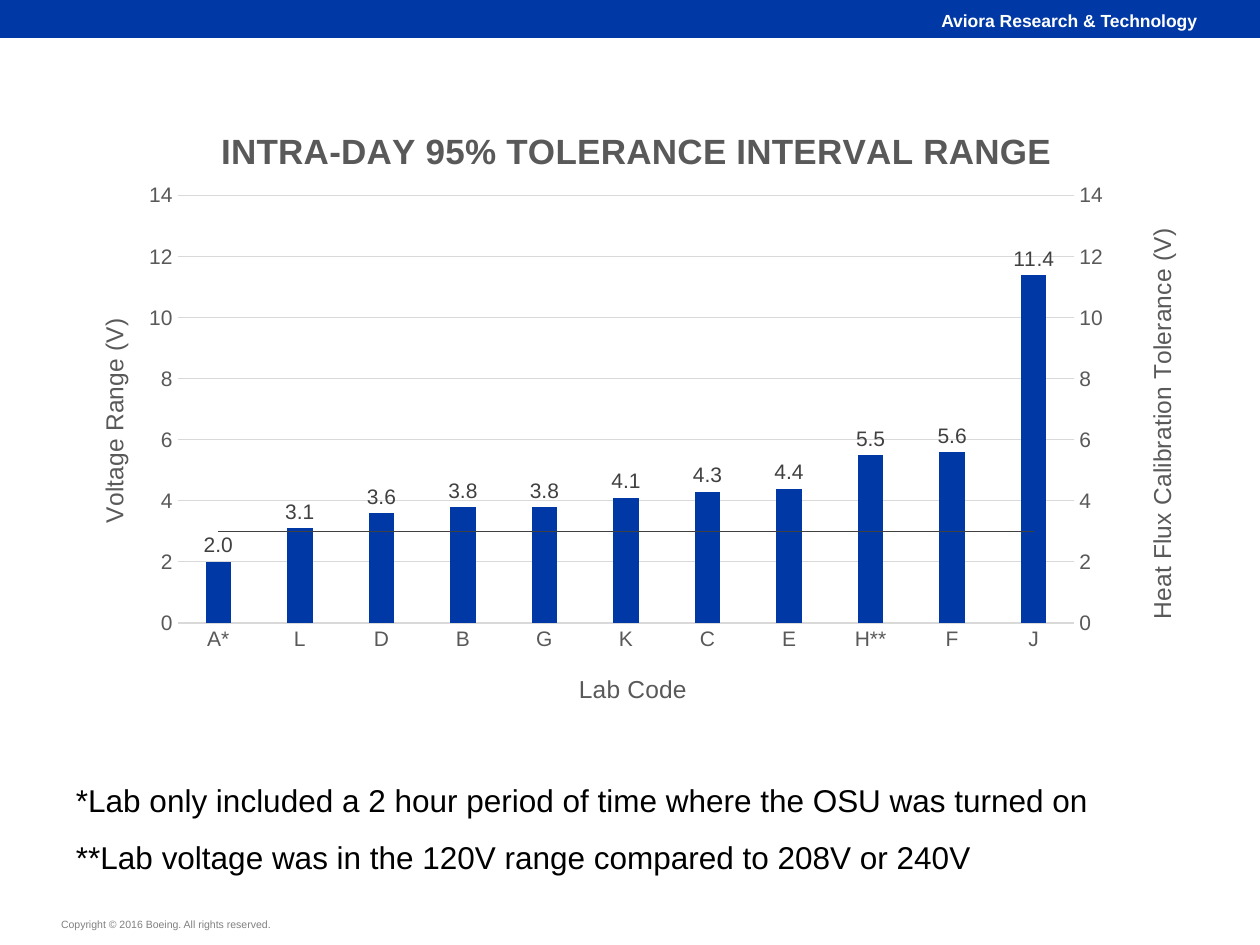
from copy import deepcopy
from dataclasses import dataclass

from lxml import etree
from pptx import Presentation
from pptx.chart.axis import ValueAxis
from pptx.chart.data import CategoryChartData
from pptx.dml.color import RGBColor
from pptx.enum.chart import XL_CHART_TYPE, XL_LABEL_POSITION, XL_MARKER_STYLE, XL_TICK_MARK
from pptx.enum.shapes import MSO_SHAPE
from pptx.enum.text import MSO_ANCHOR, PP_ALIGN
from pptx.oxml.ns import qn
from pptx.util import Emu, Pt

COLUMNS = XL_CHART_TYPE.COLUMN_CLUSTERED
OUTSIDE_END = XL_LABEL_POSITION.OUTSIDE_END
NO_MARKER = XL_MARKER_STYLE.NONE
NO_TICK = XL_TICK_MARK.NONE
RECTANGLE = MSO_SHAPE.RECTANGLE
TOP, BOTTOM = MSO_ANCHOR.TOP, MSO_ANCHOR.BOTTOM
LEFT, RIGHT = PP_ALIGN.LEFT, PP_ALIGN.RIGHT

BLUE = RGBColor(0x00, 0x39, 0xA6)
WHITE = RGBColor(0xFF, 0xFF, 0xFF)
BLACK = RGBColor(0x00, 0x00, 0x00)
GRAY = RGBColor(0x80, 0x80, 0x80)
AXIS_GRAY = RGBColor(0x59, 0x59, 0x59)
LABEL_GRAY = RGBColor(0x40, 0x40, 0x40)
GRID_GRAY = RGBColor(0xD9, 0xD9, 0xD9)

FONT = "Arial"
PIXELS_PER_INCH = 126

RANGES = {"A*": 2.0, "L": 3.1, "D": 3.6, "B": 3.8, "G": 3.8, "K": 4.1,
          "C": 4.3, "E": 4.4, "H**": 5.5, "F": 5.6, "J": 11.4}
TOLERANCE = 3


@dataclass(frozen=True)
class Box:
    left: int
    top: int
    width: int
    height: int


@dataclass(frozen=True)
class TextBlock:
    box: Box
    lines: tuple[str, ...]
    size: int
    color: RGBColor
    bold: bool = False
    alignment: PP_ALIGN = LEFT
    anchor: MSO_ANCHOR = TOP
    margins: tuple[int, int] = (0, 0)
    line_spacing: float = 1.0


CHART_BOX = Box(63, 93, 1134, 631)
PLOT_BOX = Box(177, 196, 897, 427)

TEXT_BLOCKS = (
    TextBlock(Box(60, 917, 285, 15), ("Copyright © 2016 Boeing. All rights reserved.",),
              6, GRAY, anchor=BOTTOM, margins=(1, 1)),
    TextBlock(Box(505, 10, 692, 21), ("Aviora Research & Technology",),
              10, WHITE, bold=True, alignment=RIGHT),
    TextBlock(Box(63, 756, 1134, 120),
              ("*Lab only included a 2 hour period of time where the OSU was turned on",
               "**Lab voltage was in the 120V range compared to 208V or 240V"),
              18, BLACK, margins=(13, 6), line_spacing=1.5),
)


def px(pixels: int) -> Emu:
    return Emu(round(pixels * 914400 / PIXELS_PER_INCH))


def frame(box: Box) -> tuple[Emu, ...]:
    return px(box.left), px(box.top), px(box.width), px(box.height)


def style_font(font, size: int, color: RGBColor, bold: bool = False) -> None:
    font.name = FONT
    font.size = Pt(size)
    font.bold = bold
    font.color.rgb = color


def add_text(slide, block: TextBlock) -> None:
    text_frame = slide.shapes.add_textbox(*frame(block.box)).text_frame
    text_frame.word_wrap = True
    text_frame.vertical_anchor = block.anchor
    horizontal, vertical = block.margins
    text_frame.margin_left = text_frame.margin_right = px(horizontal)
    text_frame.margin_top = text_frame.margin_bottom = px(vertical)
    text_frame.text = "\n".join(block.lines)
    for paragraph in text_frame.paragraphs:
        paragraph.alignment = block.alignment
        paragraph.line_spacing = block.line_spacing
        style_font(paragraph.runs[0].font, block.size, block.color, block.bold)


def add_value(parent, tag: str, value) -> None:
    etree.SubElement(parent, qn(tag)).set("val", str(value))


def make_layout(left: int, top: int, size: tuple[int, int] | None = None):
    """Chart layout for a place on the slide, as fractions of the chart."""
    layout = etree.Element(qn("c:layout"))
    manual = etree.SubElement(layout, qn("c:manualLayout"))
    if size:
        add_value(manual, "c:layoutTarget", "inner")
    add_value(manual, "c:xMode", "edge")
    add_value(manual, "c:yMode", "edge")
    add_value(manual, "c:x", round((left - CHART_BOX.left) / CHART_BOX.width, 3))
    add_value(manual, "c:y", round((top - CHART_BOX.top) / CHART_BOX.height, 3))
    if size:
        add_value(manual, "c:w", round(size[0] / CHART_BOX.width, 3))
        add_value(manual, "c:h", round(size[1] / CHART_BOX.height, 3))
    return layout


def set_title(title, text: str, size: int, left: int, top: int, bold: bool = False) -> None:
    title.text_frame.text = text
    style_font(title.text_frame.paragraphs[0].runs[0].font, size, AXIS_GRAY, bold)
    element = title._element
    for old_layout in element.findall(qn("c:layout")):
        element.remove(old_layout)
    element.find(qn("c:tx")).addnext(make_layout(left, top))


def style_axis(axis) -> None:
    axis.major_tick_mark = axis.minor_tick_mark = NO_TICK
    style_font(axis.tick_labels.font, 12, AXIS_GRAY)


def add_right_axis(chart) -> ValueAxis:
    """Move the second series to a line plot with its own axes."""
    category_axis, value_axis = chart.category_axis._element, chart.value_axis._element
    bar_plot = chart.plots[0]._element
    series = bar_plot.findall(qn("c:ser"))[1]
    for invert in series.findall(qn("c:invertIfNegative")):
        series.remove(invert)
    line_plot = etree.Element(qn("c:lineChart"))
    add_value(line_plot, "c:grouping", "standard")
    add_value(line_plot, "c:varyColors", 0)
    line_plot.append(series)
    add_value(line_plot, "c:marker", 1)
    category_id, value_id = "5001", "5002"
    add_value(line_plot, "c:axId", category_id)
    add_value(line_plot, "c:axId", value_id)
    bar_plot.addnext(line_plot)

    right_value, hidden_category = deepcopy(value_axis), deepcopy(category_axis)
    for axis, own_id, cross_id in ((right_value, value_id, category_id),
                                   (hidden_category, category_id, value_id)):
        axis.find(qn("c:axId")).set("val", own_id)
        axis.find(qn("c:crossAx")).set("val", cross_id)
    hidden_category.find(qn("c:delete")).set("val", "1")
    right_value.find(qn("c:axPos")).set("val", "r")
    right_value.find(qn("c:crosses")).set("val", "max")
    value_axis.addnext(right_value)
    right_value.addnext(hidden_category)
    right_axis = ValueAxis(right_value)
    right_axis.has_major_gridlines = False
    return right_axis


def add_range_chart(slide) -> None:
    data = CategoryChartData()
    data.categories = list(RANGES)
    data.add_series("Series 1", list(RANGES.values()))
    data.add_series("Series 2", [TOLERANCE] * len(RANGES))
    chart = slide.shapes.add_chart(COLUMNS, *frame(CHART_BOX), data).chart
    chart.has_legend = False
    style_font(chart.font, 10, BLACK)

    # Axes
    category_axis, value_axis = chart.category_axis, chart.value_axis
    style_axis(category_axis)
    category_axis.format.line.color.rgb = GRID_GRAY
    category_axis.format.line.width = Pt(0.75)
    style_axis(value_axis)
    value_axis.format.line.fill.background()
    value_axis.minimum_scale, value_axis.maximum_scale = 0, 14
    value_axis.major_unit = 2
    value_axis.tick_labels.number_format = "0"
    value_axis.tick_labels.number_format_is_linked = False
    grid_line = value_axis.major_gridlines.format.line
    grid_line.color.rgb = GRID_GRAY
    grid_line.width = Pt(0.75)
    right_axis = add_right_axis(chart)

    # Titles
    chart.has_title = True
    chart.chart_title.include_in_layout = False
    set_title(chart.chart_title, "INTRA-DAY 95% TOLERANCE INTERVAL RANGE", 20, 215, 122, True)
    set_title(category_axis.axis_title, "Lab Code", 14, 575, 669)
    set_title(value_axis.axis_title, "Voltage Range (V)", 14, 94, 314)
    set_title(right_axis.axis_title, "Heat Flux Calibration Tolerance (V)", 14, 1142, 224)

    # Plot area
    plot_area = chart.plots[0]._element.getparent()
    for old_layout in plot_area.findall(qn("c:layout")):
        plot_area.remove(old_layout)
    plot_area.insert(0, make_layout(PLOT_BOX.left, PLOT_BOX.top,
                                    (PLOT_BOX.width, PLOT_BOX.height)))

    # Columns with value labels
    columns, tolerance_plot = chart.plots
    columns.vary_by_categories = False
    columns.gap_width, columns.overlap = 219, -27
    range_series = columns.series[0]
    range_series.format.fill.solid()
    range_series.format.fill.fore_color.rgb = BLUE
    labels = range_series.data_labels
    labels.show_value = True
    labels.position = OUTSIDE_END
    labels.number_format, labels.number_format_is_linked = "0.0", False
    style_font(labels.font, 12, LABEL_GRAY)

    # Tolerance line
    tolerance = tolerance_plot.series[0]
    tolerance.smooth = False
    tolerance.marker.style = NO_MARKER
    tolerance.format.line.color.rgb = LABEL_GRAY
    tolerance.format.line.width = Pt(0.75)


def main() -> None:
    presentation = Presentation()
    presentation.slide_width, presentation.slide_height = px(1260), px(945)
    slide = presentation.slides.add_slide(presentation.slide_layouts[6])

    # Header band
    band = slide.shapes.add_shape(RECTANGLE, *frame(Box(0, -1, 1260, 39)))
    band.shadow.inherit = False
    band.fill.solid()
    band.fill.fore_color.rgb = BLUE
    band.line.fill.background()

    add_range_chart(slide)
    for block in TEXT_BLOCKS:
        add_text(slide, block)
    presentation.save("out.pptx")


if __name__ == "__main__":
    main()
